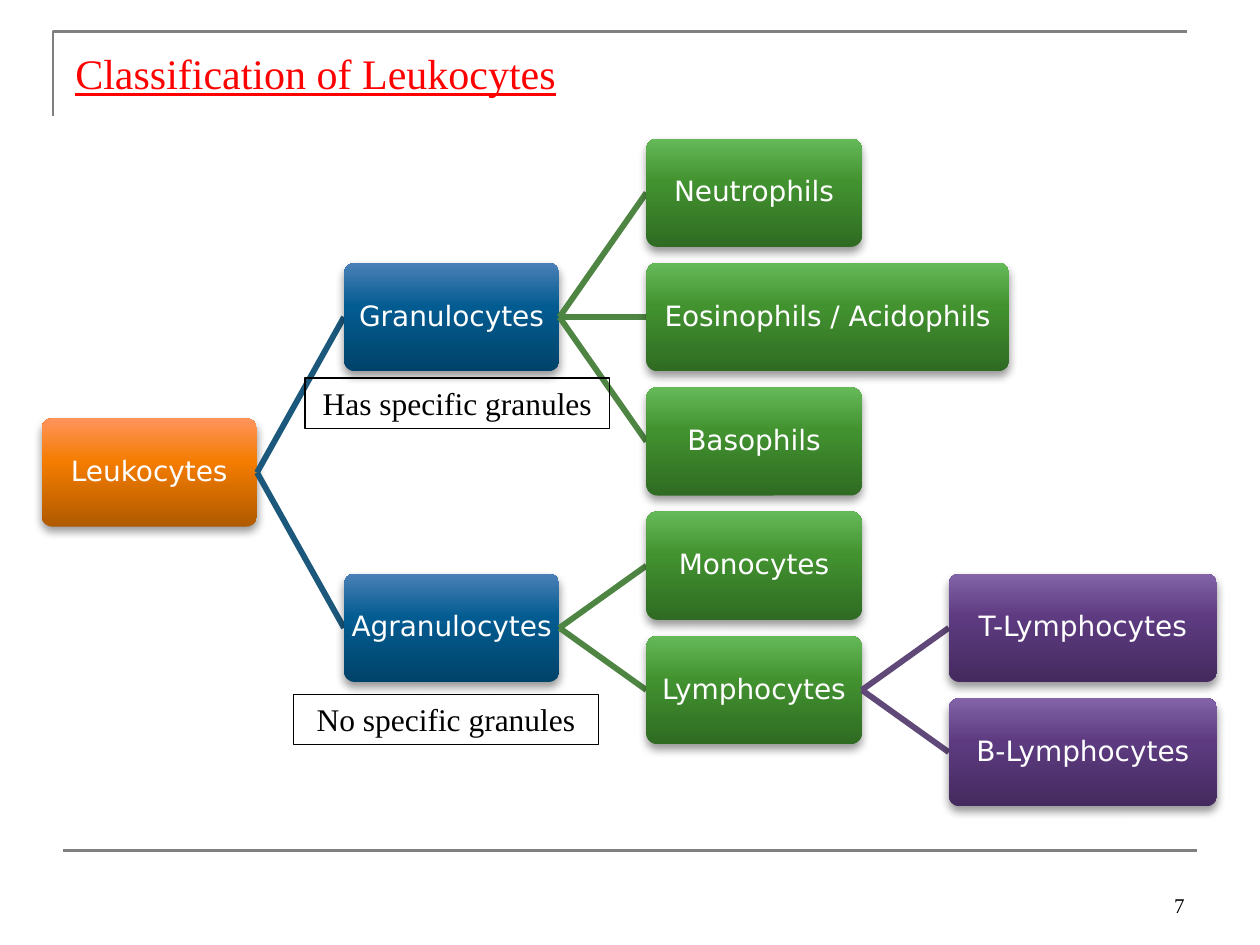
from lxml.etree import SubElement
from pptx import Presentation
from pptx.dml.color import RGBColor
from pptx.enum.shapes import MSO_CONNECTOR as Connector, MSO_SHAPE as Shape
from pptx.enum.text import MSO_ANCHOR as Anchor, PP_ALIGN as Align
from pptx.oxml import parse_xml
from pptx.oxml.ns import nsdecls, qn
from pptx.util import Inches, Pt

COLORS = {"red": "FF0000", "black": "000000", "white": "FFFFFF", "rule": "808080"}
LEVELS = [
    {"link": None, "stops": ("B05A00", "F47C00", "FF945C")},
    {"link": "1B587C", "stops": ("00436A", "035C91", "4A80B7")},
    {"link": "4E8542", "stops": ("2F6B22", "429230", "66B959")},
    {"link": "604878", "stops": ("442A5E", "5E3B81", "8364A8")},
]
NODES = [
    ("Leukocytes", 0, 2.25, 1.71, None),
    ("Granulocytes", 1, 1, 1.71, "Leukocytes"),
    ("Neutrophils", 2, 0, 1.71, "Granulocytes"),
    ("Eosinophils / Acidophils", 2, 1, 2.88, "Granulocytes"),
    ("Basophils", 2, 2, 1.71, "Granulocytes"),
    ("Agranulocytes", 1, 3.5, 1.71, "Leukocytes"),
    ("Monocytes", 2, 3, 1.71, "Agranulocytes"),
    ("Lymphocytes", 2, 4, 1.71, "Agranulocytes"),
    ("T-Lymphocytes", 3, 3.5, 2.13, "Lymphocytes"),
    ("B-Lymphocytes", 3, 4.5, 2.13, "Lymphocytes"),
]
NOTES = [("Has specific granules", 2.42, 3), ("No specific granules", 2.33, 5.51)]

LEFT, COLUMN = 0.33, 2.4
TOP_CENTER, BOTTOM_CENTER, LAST_ROW = 1.53, 5.97, 4.5
ROW = (BOTTOM_CENTER - TOP_CENTER) / LAST_ROW
NODE_HEIGHT = 0.86
SERIF, SANS = "Times New Roman", "DejaVu Sans"

deck = Presentation()
deck.slide_width, deck.slide_height = Inches(10), Inches(7.5)
page = deck.slides.add_slide(deck.slide_layouts[6])


def rgb(value):
    return RGBColor.from_string(value)


def write(box, text, size=18, font=SERIF, color="black", align=Align.LEFT,
          anchor=Anchor.TOP, inset=None, spacing=None, underline=None):
    frame = box.text_frame
    frame.word_wrap = True
    frame.vertical_anchor = anchor
    if inset is not None:
        frame.margin_left = frame.margin_right = Inches(inset)
        frame.margin_top = frame.margin_bottom = Inches(inset)
    para = frame.paragraphs[0]
    para.alignment = align
    para.line_spacing = spacing
    span = para.add_run()
    span.text = text
    span.font.size, span.font.name = Pt(size), font
    span.font.underline = underline
    span.font.color.rgb = rgb(COLORS[color])


def add_text(text, left, top, width, height, **style):
    box = page.shapes.add_textbox(*map(Inches, (left, top, width, height)))
    write(box, text, **style)


def add_line(start, end, color, width):
    line = page.shapes.add_connector(Connector.STRAIGHT, *map(Inches, (*start, *end)))
    line.line.color.rgb, line.line.width = rgb(color), Pt(width)
    SubElement(line._element.spPr, qn("a:effectLst"))


def add_gradient_and_shadow(box, stops):
    marks = "".join(f'<a:gs pos="{place}"><a:srgbClr val="{color}"/></a:gs>'
                    for place, color in zip((0, 60000, 100000), stops))
    gradient = parse_xml(f'<a:gradFill {nsdecls("a")} rotWithShape="1"><a:gsLst>{marks}</a:gsLst>'
                         '<a:lin ang="16200000" scaled="0"/></a:gradFill>')
    shadow = parse_xml(f'<a:effectLst {nsdecls("a")}>'
                       f'<a:outerShdw blurRad="{Pt(5.2)}" dist="{Pt(3)}" dir="5400000" rotWithShape="0">'
                       '<a:srgbClr val="000000"><a:alpha val="40000"/></a:srgbClr>'
                       '</a:outerShdw></a:effectLst>')
    properties = box._element.spPr
    properties.find(qn("a:prstGeom")).addnext(gradient)
    properties.find(qn("a:ln")).addnext(shadow)


def add_node(text, level, row, width, parent, exits):
    left, center = LEFT + level * COLUMN, TOP_CENTER + row * ROW
    if parent:
        add_line(exits[parent], (left, center), LEVELS[level]["link"], 3.35)
    box = page.shapes.add_shape(Shape.ROUNDED_RECTANGLE, *map(
        Inches, (left, center - NODE_HEIGHT / 2, width, NODE_HEIGHT)))
    box.adjustments[0] = 0.1
    box.line.fill.background()
    add_gradient_and_shadow(box, LEVELS[level]["stops"])
    write(box, text, size=16, font=SANS, color="white", align=Align.CENTER,
          anchor=Anchor.MIDDLE, inset=0.01, spacing=0.9)
    exits[text] = (left + width, center)


def add_note(text, left, top):
    box = page.shapes.add_shape(Shape.RECTANGLE, *map(Inches, (left, top, 2.42, 0.4)))
    box.shadow.inherit = False
    box.fill.background()
    box.line.color.rgb, box.line.width = rgb(COLORS["black"]), Pt(0.75)
    write(box, text, align=Align.CENTER)


corner = page.shapes.build_freeform(Inches(0.42), Inches(0.92))
corner.add_line_segments([(Inches(0.42), Inches(0.25)), (Inches(9.42), Inches(0.25))], close=False)
frame_line = corner.convert_to_shape()
frame_line.shadow.inherit = False
frame_line.fill.background()
frame_line.line.color.rgb, frame_line.line.width = rgb(COLORS["rule"]), Pt(1.5)
add_line((0.5, 6.75), (9.5, 6.75), COLORS["rule"], 1.5)
add_text("7", 7.17, 6.83, 2.33, 0.5, size=12, align=Align.RIGHT, anchor=Anchor.BOTTOM)

node_exits = {}
for node in NODES:
    add_node(*node, node_exits)
for note in NOTES:
    add_note(*note)
add_text("Classification of Leukocytes", 0.5, 0.33, 4.5, 0.51, size=24, color="red", underline=True)

deck.save("out.pptx")
